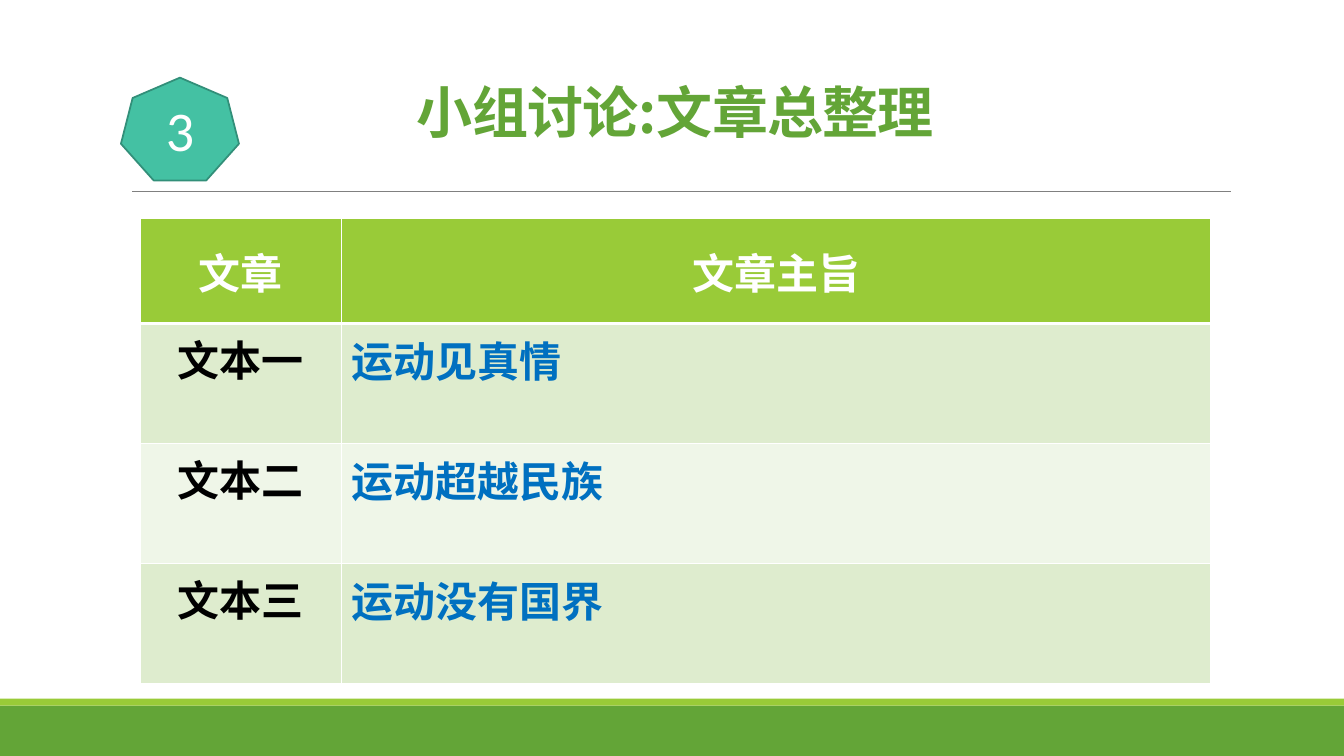
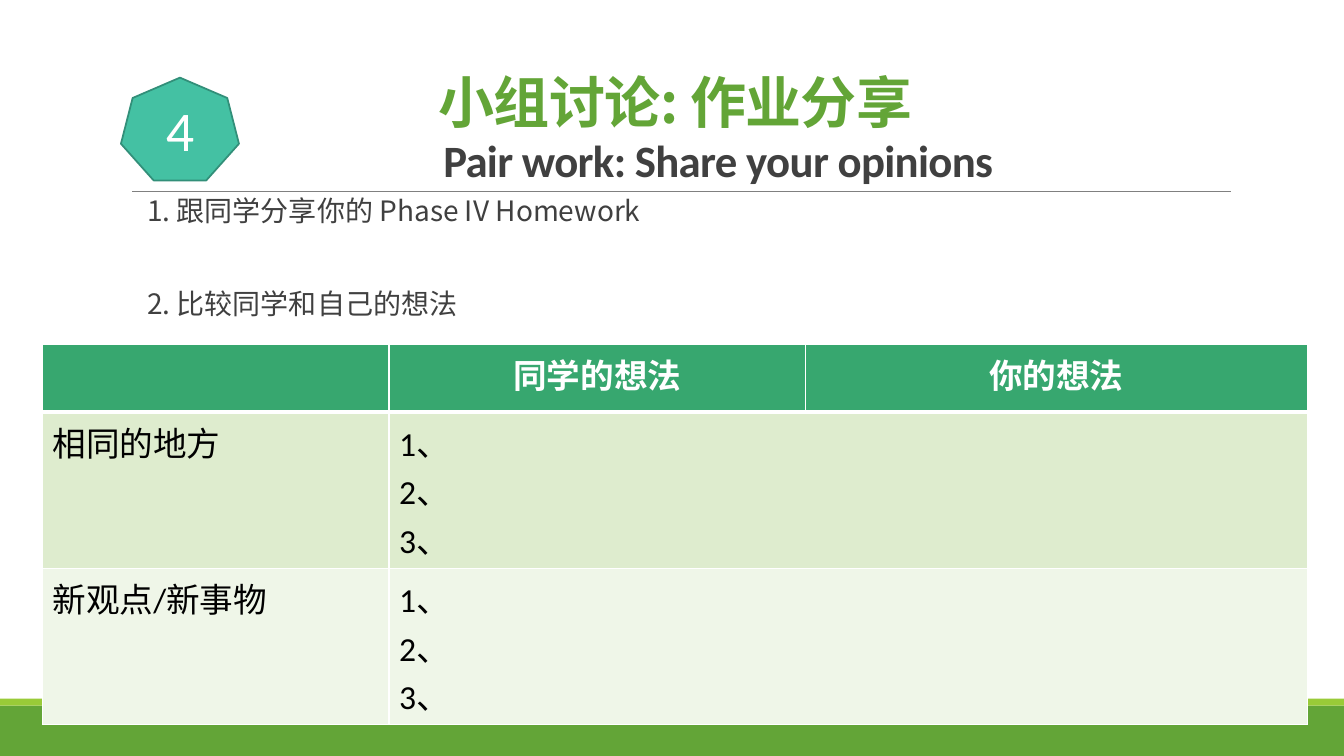
from dataclasses import dataclass

from lxml import etree
from pptx import Presentation, util as u
from pptx.dml.color import RGBColor
from pptx.enum import shapes, text
from pptx.oxml import ns


@dataclass(frozen=True)
class Theme:
    green: str = "63A537"
    lime: str = "99CB38"
    emerald: str = "37A76F"
    teal: str = "44C1A3"
    teal_edge: str = "328F79"
    rule: str = "808080"
    ink: str = "404040"
    black: str = "000000"
    white: str = "FFFFFF"
    blue: str = "0070C0"
    stripes: tuple = ("DEECCE", "EFF6E8")
    latin: str = "Calibri"
    chinese: str = "Noto Sans CJK SC"
    title: int = 40
    subtitle: int = 32
    theses: int = 30
    ideas: int = 24
    steps: int = 20


theme = Theme()
rgb = RGBColor.from_string
LEFT, CENTER = text.PP_ALIGN.LEFT, text.PP_ALIGN.CENTER

deck = Presentation()
deck.slide_width, deck.slide_height = u.Inches(13.33), u.Inches(7.5)


def share(*percents):
    sides = (deck.slide_width, deck.slide_height)
    return [u.Emu(round(sides[i % 2] * part / 100)) for i, part in enumerate(percents)]


def style(paragraph, size, color, face=theme.latin, bold=False, align=LEFT, spacing=None):
    paragraph.alignment = align
    paragraph.line_spacing = spacing
    font = paragraph.font
    font.name, font.size, font.bold = face, u.Pt(size), bold
    font.color.rgb = rgb(color)
    etree.SubElement(font._rPr, ns.qn("a:ea"), typeface=theme.chinese)


layout = deck.slide_layouts[5]
theses_slide, ideas_slide = [deck.slides.add_slide(layout) for _ in range(2)]

footer = []
for color, area in ((theme.green, (0, 93.33, 100, 6.67)), (theme.lime, (0, 92.4, 100, 0.93))):
    band = theses_slide.shapes.add_shape(shapes.MSO_SHAPE.RECTANGLE, *share(*area))
    band.shadow.inherit = False
    band.fill.solid()
    band.fill.fore_color.rgb = rgb(color)
    band.line.fill.background()
    footer.append(band)
title_rule = theses_slide.shapes.add_connector(
    shapes.MSO_CONNECTOR.STRAIGHT, *share(9.83, 25.33, 91.6, 25.33))
title_rule.line.color.rgb = rgb(theme.rule)
title_rule.line.width = u.Pt(0.5)
etree.SubElement(title_rule.element.spPr, ns.qn("a:effectLst"))
for order, part in enumerate([*footer, title_rule]):
    part.element.xpath(".//p:cNvPr")[0].set("id", str(20 + order))
    layout.shapes.element.insert(2 + order, part.element)

headings = (
    (theses_slide, "3", ["小组讨论:文章总整理"], 0.46),
    (ideas_slide, "4", ["小组讨论: 作业分享", "Pair work: Share your opinions"], 0.05),
)
for slide, number, lines, bottom in headings:
    title = slide.shapes.title
    title.left, title.top, title.width, title.height = share(9, 4.13, 82.5, 21.2)
    frame = title.text_frame
    frame.auto_size = text.MSO_AUTO_SIZE.NONE
    frame.vertical_anchor = text.MSO_ANCHOR.BOTTOM
    frame.margin_bottom = u.Inches(bottom)
    frame.text = "\n".join(lines)
    style(frame.paragraphs[0], theme.title, theme.green, theme.chinese, True, CENTER, 0.85)
    for subtitle in frame.paragraphs[1:]:
        style(subtitle, theme.subtitle, theme.ink, theme.latin, True, CENTER, 0.85)
        subtitle.space_before = u.Pt(4)
        subtitle._p.pPr.set("marL", str(u.Inches(0.85)))
    for line in frame.paragraphs:
        line.font._rPr.set("spc", "-50")

    badge = slide.shapes.add_shape(shapes.MSO_SHAPE.HEPTAGON, *share(9, 10.27, 8.78, 13.6))
    badge.shadow.inherit = False
    badge.fill.solid()
    badge.fill.fore_color.rgb = rgb(theme.teal)
    badge.line.color.rgb = rgb(theme.teal_edge)
    badge.line.width = u.Pt(1.25)
    badge.text_frame.text = number
    badge.text_frame.vertical_anchor = text.MSO_ANCHOR.MIDDLE
    style(badge.text_frame.paragraphs[0], theme.title, theme.white, align=CENTER)

steps = ideas_slide.shapes.add_textbox(*share(10.95, 25.47, 79.35, 19)).text_frame
steps.word_wrap = True
steps.margin_left = steps.margin_right = 0
steps.text = "1. 跟同学分享你的 Phase IV Homework\n2. 比较同学和自己的想法"
for step in steps.paragraphs:
    style(step, theme.steps, theme.ink, theme.chinese, spacing=0.9)
steps.paragraphs[1].space_before = u.Pt(45)

blanks = "1、\n2、\n3、"
theses_rows = (
    ("文章", "文章主旨"),
    ("文本一", "运动见真情"),
    ("文本二", "运动超越民族"),
    ("文本三", "运动没有国界"),
)
ideas_rows = (
    ("", "同学的想法", "你的想法"),
    ("相同的地方", blanks, ""),
    ("新观点/新事物", blanks, ""),
)
tables = (
    (theses_slide, theses_rows, (10.43, 28.93), (15, 64.65), (13.87, 15.9),
     theme.lime, theme.theses, True, theme.blue),
    (ideas_slide, ideas_rows, (3.15, 45.6), (25.8, 30.97, 37.35), (8.93, 20.67),
     theme.emerald, theme.ideas, False, theme.black),
)
for slide, rows, corner, widths, heights, head_fill, size, bold, answer_color in tables:
    is_theses = slide is theses_slide
    total = heights[0] + heights[1] * (len(rows) - 1)
    grid = slide.shapes.add_table(
        len(rows), len(widths), *share(*corner, sum(widths), total)).table
    grid.horz_banding = False
    for column, width in zip(grid.columns, widths):
        column.width = share(width)[0]
    for r, row in enumerate(rows):
        is_head = r == 0
        grid.rows[r].height = share(0, heights[min(r, 1)])[1]
        for c, words in enumerate(row):
            cell = grid.cell(r, c)
            cell.text = words
            cell.fill.solid()
            cell.fill.fore_color.rgb = rgb(head_fill if is_head else theme.stripes[(r - 1) % 2])
            is_label = is_theses and c == 0 and not is_head
            if is_label:
                cell.margin_left = cell.margin_right = u.Inches(0.07)
                cell.margin_top = cell.margin_bottom = 0
            if is_head and is_theses:
                cell.vertical_anchor = text.MSO_ANCHOR.MIDDLE
            color = theme.white if is_head else answer_color if c else theme.black
            for paragraph in cell.text_frame.paragraphs:
                style(paragraph, size, color, bold=is_head or bold,
                      align=CENTER if is_head or is_label else LEFT,
                      spacing=1.07 if is_label else None)
            properties = cell._tc.get_or_add_tcPr()
            for order, side in enumerate("LRTB"):
                is_thick = (r, side) in ((0, "B"), (1, "T"))
                edge = etree.Element(ns.qn(f"a:ln{side}"), w=str(u.Pt(3 if is_thick else 1)))
                paint = etree.SubElement(edge, ns.qn("a:solidFill"))
                etree.SubElement(paint, ns.qn("a:srgbClr"), val=theme.white)
                properties.insert(order, edge)
for r in range(1, len(ideas_rows)):
    grid.cell(r, 1).merge(grid.cell(r, 2))

deck.save("out.pptx")
